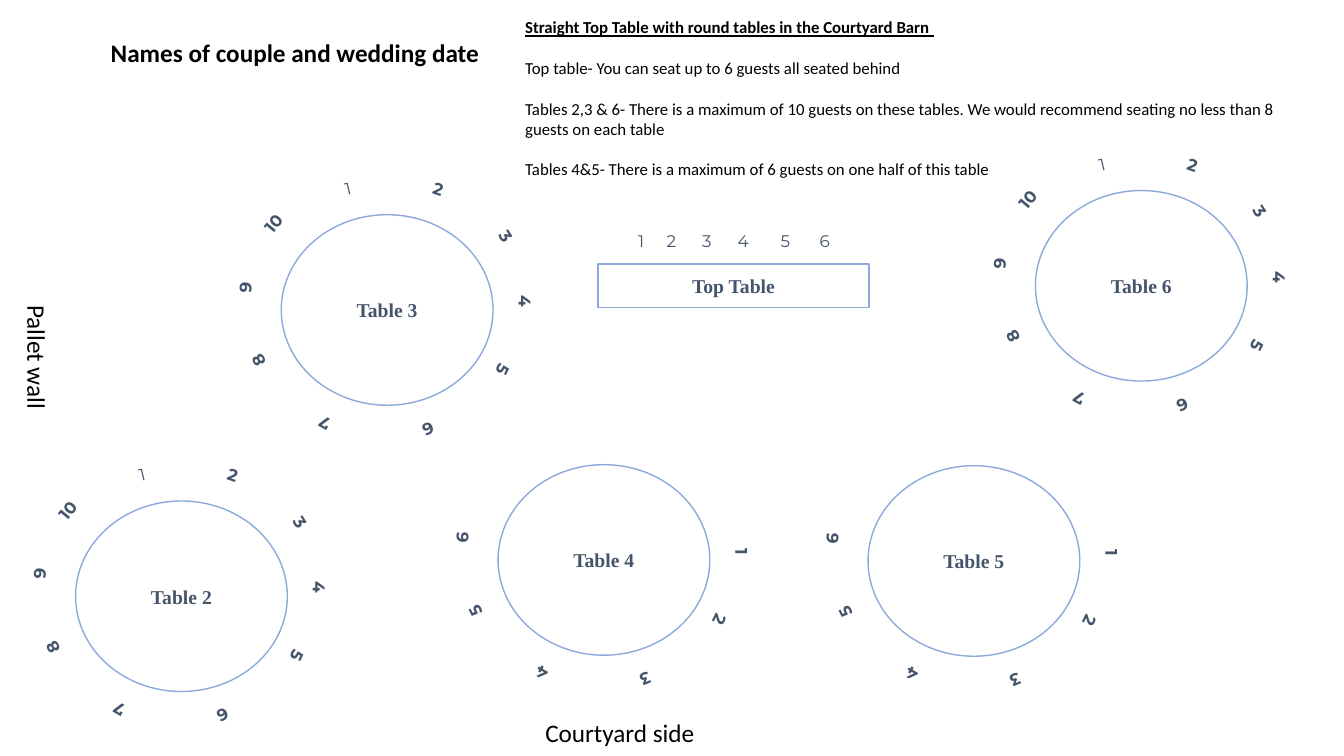
from lxml.etree import SubElement
from pptx import Presentation
from pptx.dml.color import RGBColor
from pptx.enum.shapes import MSO_SHAPE as Shape
from pptx.enum.text import MSO_ANCHOR as Anchor, MSO_AUTO_SIZE as AutoSize, PP_ALIGN as Align
from pptx.oxml.ns import qn
from pptx.util import Pt

PX = 9144
BLACK = RGBColor(0x00, 0x00, 0x00)
WHITE = RGBColor(0xFF, 0xFF, 0xFF)
SLATE = RGBColor(0x44, 0x54, 0x6A)
BLUE = RGBColor(0x8D, 0xA9, 0xDB)

TABLE_LABEL = {"name": "Times New Roman", "size": Pt(14), "bold": True, "color": SLATE}
SEAT_BOLD = {"name": "Montserrat", "size": Pt(12), "bold": True, "color": SLATE}
SEAT_PLAIN = {**SEAT_BOLD, "bold": False}
CAPTION = {"name": "Calibri", "size": Pt(18), "bold": False, "color": BLACK}
TITLE = {**CAPTION, "bold": True}
NOTE = {**CAPTION, "size": Pt(12)}
NOTE_HEADING = {**NOTE, "bold": True, "underline": True}

SEATS = [
    (28, -55, 76, 58, 346.7),
    (118, -55, 76, 58, 18.8),
    (185, -8, 76, 58, 57.8),
    (213, 48, 58, 76, 90),
    (182, 125, 76, 58, 116),
    (108, 186, 76, 55, 157.7),
    (14, 169, 58, 76, 209.2),
    (-52, 107, 58, 76, 242.8),
    (-65, 34, 58, 76, 275.4),
    (-37, -29, 58, 76, 309.8),
]
FULL_TABLE = range(10)
HALF_TABLE = range(3, 9)
ROUND_TABLES = [
    ("Table 3", 279, 213, FULL_TABLE),
    ("Table 2", 75, 497, FULL_TABLE),
    ("Table 4", 494, 461, HALF_TABLE),
    ("Table 5", 861, 462, HALF_TABLE),
    ("Table 6", 1027, 189, FULL_TABLE),
]
TOP_SEAT_STOPS = [41, 71, 106, 142, 184, 223]
NOTES = [
    ("Straight Top Table with round tables in the Courtyard Barn ", NOTE_HEADING),
    ("Top table- You can seat up to 6 guests all seated behind", NOTE),
    ("Tables 2,3 & 6- There is a maximum of 10 guests on these tables. "
     "We would recommend seating no less than 8 guests on each table", NOTE),
    ("Tables 4&5- There is a maximum of 6 guests on one half of this table", NOTE),
]


def scaled(box):
    return [length * PX for length in box]


def write(para, text, style):
    span = para.add_run()
    span.text = text
    for name, value in style.items():
        if name == "color":
            span.font.color.rgb = value
        else:
            setattr(span.font, name, value)


def add_outline(group, kind, box, line=None, fill=None, angle=0):
    shape = group.shapes.add_shape(kind, *scaled(box))
    shape.shadow.inherit = False
    shape.rotation = angle
    if fill is None:
        shape.fill.background()
    else:
        shape.fill.solid()
        shape.fill.fore_color.rgb = fill
    if line is None:
        shape.line.fill.background()
    else:
        shape.line.color.rgb = line
        shape.line.width = Pt(1)
    frame = shape.text_frame
    frame.vertical_anchor = Anchor.MIDDLE
    for side in ("left", "top", "right", "bottom"):
        setattr(frame, f"margin_{side}", 0)
    para = frame.paragraphs[0]
    para.alignment = Align.CENTER
    return para


def add_top_table(page, left, top):
    group = page.shapes.add_group_shape()
    label = add_outline(group, Shape.RECTANGLE, (left, top + 43, 269, 43), line=BLUE)
    write(label, "Top Table", TABLE_LABEL)
    seats = add_outline(group, Shape.RECTANGLE, (left + 2, top, 269, 40), fill=WHITE)
    seats.alignment = Align.LEFT
    stops = SubElement(seats._p.get_or_add_pPr(), qn("a:tabLst"))
    for stop in TOP_SEAT_STOPS:
        SubElement(stops, qn("a:tab"), pos=str(stop * PX), algn="ctr")
    numbers = range(1, len(TOP_SEAT_STOPS) + 1)
    write(seats, "".join(f"\t{number}" for number in numbers), SEAT_PLAIN)


def add_round_table(page, name, left, top, places):
    group = page.shapes.add_group_shape()
    label = add_outline(group, Shape.OVAL, (left, top, 210, 189), line=BLUE)
    write(label, name, TABLE_LABEL)
    for number, place in enumerate(places, 1):
        dx, dy, width, height, angle = SEATS[place]
        seat = add_outline(group, Shape.OVAL, (left + dx, top + dy, width, height), angle=angle)
        write(seat, str(number), SEAT_PLAIN if place == 0 else SEAT_BOLD)


def add_text(page, box, lines, angle=0, gap=0):
    text_box = page.shapes.add_textbox(*scaled(box))
    text_box.rotation = angle
    frame = text_box.text_frame
    frame.word_wrap = True
    frame.auto_size = AutoSize.SHAPE_TO_FIT_TEXT
    for index, (text, style) in enumerate(lines):
        para = frame.add_paragraph() if index else frame.paragraphs[0]
        if index:
            para.space_before = Pt(gap)
        write(para, text, style)


def main():
    deck = Presentation()
    deck.slide_width, deck.slide_height = scaled((1333, 750))
    page = deck.slides.add_slide(deck.slide_layouts[6])
    add_top_table(page, 593, 219)
    add_text(page, (100, 32, 580, 40), [("Names of couple and wedding date", TITLE)])
    add_text(page, (511, 12, 778, 212), NOTES, gap=14.6)
    for table in ROUND_TABLES:
        add_round_table(page, *table)
    add_text(page, (531, 707, 246, 40), [("Courtyard side", CAPTION)])
    add_text(page, (-32, 342, 138, 40), [("Pallet wall", CAPTION)], angle=90)
    deck.save("out.pptx")


if __name__ == "__main__":
    main()
